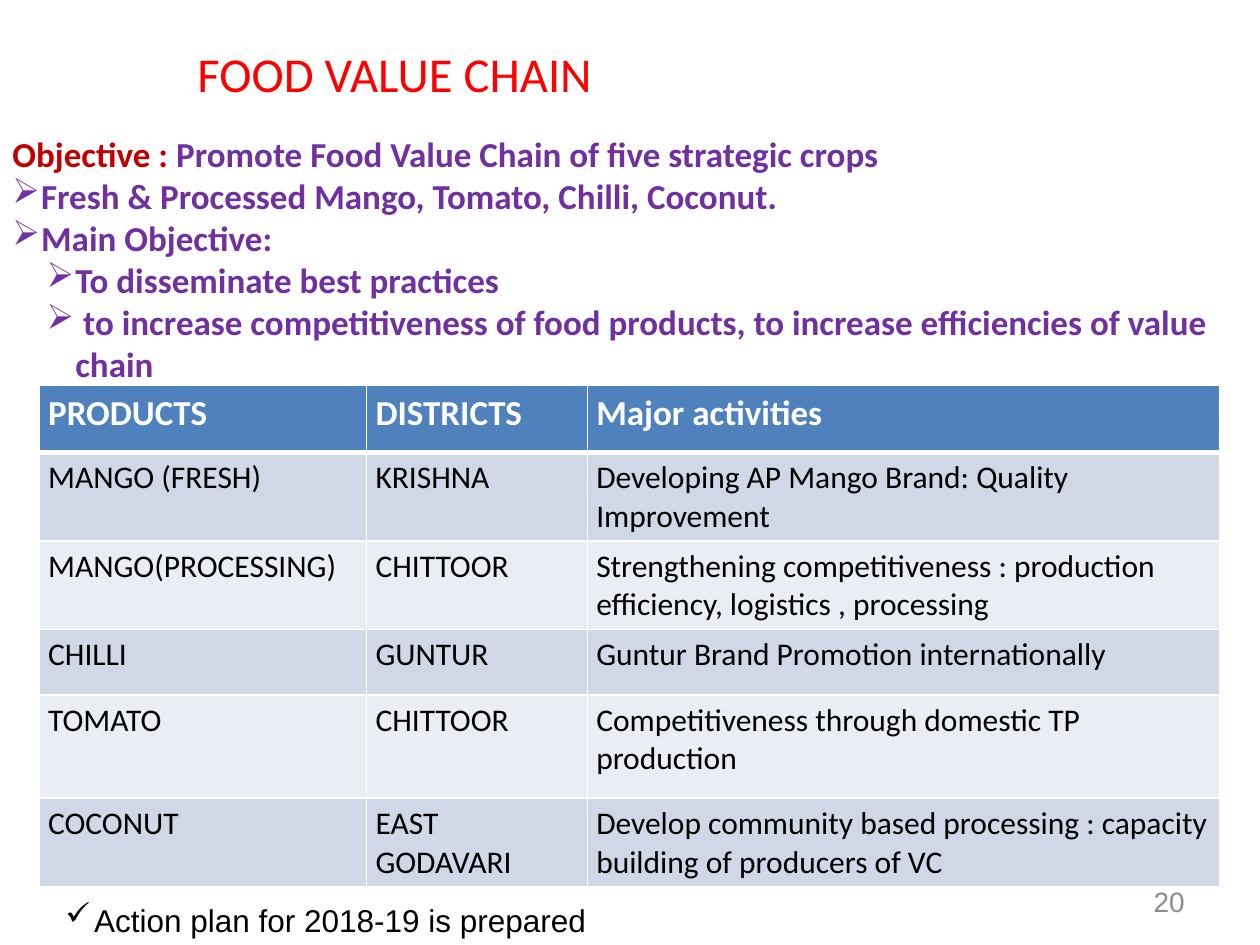
from lxml.etree import SubElement
from pptx import Presentation
from pptx.dml.color import RGBColor
from pptx.enum.text import MSO_ANCHOR as Anchor, PP_ALIGN as Align
from pptx.oxml.ns import qn
from pptx.util import Cm, Pt

COLORS = {
    "title": "FF0000", "label": "C00000", "objective": "7030A0",
    "number": "8C8C8C", "header": "4F81BD", "odd": "D0D8E8",
    "even": "E9EDF4", "white": "FFFFFF", "black": "000000",
}
HANG = 0.58
OBJECTIVES = [
    (HANG, "Fresh & Processed Mango, Tomato, Chilli, Coconut."),
    (HANG, "Main Objective:"),
    (1.27, "To disseminate best practices"),
    (1.27, " to increase competitiveness of food products, "
           "to increase efficiencies of value chain"),
]
ACTIVITIES = [
    ("PRODUCTS", "DISTRICTS", "Major activities"),
    ("MANGO (FRESH)", "KRISHNA",
     "Developing AP Mango Brand: Quality Improvement"),
    ("MANGO(PROCESSING)", "CHITTOOR",
     "Strengthening competitiveness : production efficiency, logistics , processing"),
    ("CHILLI", "GUNTUR", "Guntur Brand Promotion internationally"),
    ("TOMATO", "CHITTOOR", "Competitiveness through domestic TP production"),
    ("COCONUT", "EAST GODAVARI",
     "Develop community based processing : capacity building of producers of VC"),
]
COLUMN_WIDTHS = [6.6, 4.45, 12.75]
ROW_HEIGHTS = [1.35, 1.68, 1.7, 1.32, 2.08, 1.04]


def rgb(name):
    return RGBColor.from_string(COLORS[name])


def style(run, size, color, font="Calibri", bold=False):
    run.font.size = Pt(size)
    run.font.name = font
    run.font.bold = bold
    run.font.color.rgb = rgb(color)


def add_frame(slide, box):
    frame = slide.shapes.add_textbox(*map(Cm, box)).text_frame
    frame.word_wrap = True
    return frame


def add_bullet(paragraph, mark, margin):
    properties = paragraph._p.get_or_add_pPr()
    properties.set("marL", str(Cm(margin)))
    properties.set("indent", str(-Cm(HANG)))
    SubElement(properties, qn("a:buChar"), char=mark)


def add_title(slide, box):
    frame = add_frame(slide, box)
    frame.margin_left = Cm(0.8)
    frame.margin_top = Cm(0.48)
    heading = frame.paragraphs[0]
    heading.text = "FOOD VALUE CHAIN"
    style(heading.runs[0], 48, "title")
    heading.runs[0].font._element.set("baseline", "30000")


def add_objectives(slide, box):
    frame = add_frame(slide, box)
    lead = frame.paragraphs[0]
    for text, color in [("Objective : ", "label"),
                        ("Promote Food Value Chain of five strategic crops", "objective")]:
        run = lead.add_run()
        run.text = text
        style(run, 20, color, bold=True)
    for margin, text in OBJECTIVES:
        objective = frame.add_paragraph()
        objective.text = text
        style(objective.runs[0], 20, "objective", bold=True)
        add_bullet(objective, "➢", margin)


def add_borders(cell, bottom):
    properties = cell._tc.get_or_add_tcPr()
    widths = {"lnL": 1, "lnR": 1, "lnT": 1, "lnB": bottom}
    for position, (side, width) in enumerate(widths.items()):
        line = SubElement(properties, qn(f"a:{side}"), w=str(Pt(width)))
        fill = SubElement(line, qn("a:solidFill"))
        SubElement(fill, qn("a:srgbClr"), val=COLORS["white"])
        properties.insert(position, line)


def fill_cell(cell, text, row):
    header = row == 0
    cell.text = text
    cell.margin_left = cell.margin_right = Cm(0.18)
    cell.margin_top = cell.margin_bottom = Cm(0.13)
    cell.fill.solid()
    cell.fill.fore_color.rgb = rgb("header" if header else "odd" if row % 2 else "even")
    style(cell.text_frame.paragraphs[0].runs[0], 20 if header else 18,
          "white" if header else "black", bold=header)
    add_borders(cell, 3 if header else 1)


def add_activities(slide, box):
    table = slide.shapes.add_table(
        len(ACTIVITIES), len(COLUMN_WIDTHS), *map(Cm, box)).table
    for column, width in zip(table.columns, COLUMN_WIDTHS):
        column.width = Cm(width)
    for row, height in zip(table.rows, ROW_HEIGHTS):
        row.height = Cm(height)
    for row, texts in enumerate(ACTIVITIES):
        for column, text in enumerate(texts):
            fill_cell(table.cell(row, column), text, row)


def add_action_plan(slide, box):
    plan = add_frame(slide, box).paragraphs[0]
    plan.text = "Action plan for 2018-19 is prepared"
    style(plan.runs[0], 18, "black", "Arial")
    add_bullet(plan, "✓", HANG)


def add_page_number(slide, box):
    frame = add_frame(slide, box)
    frame.vertical_anchor = Anchor.MIDDLE
    number = frame.paragraphs[0]
    number.text = "20"
    number.alignment = Align.RIGHT
    style(number.runs[0], 16, "number", "Arial")


def main():
    deck = Presentation()
    deck.slide_width, deck.slide_height = Cm(25.4), Cm(19.05)
    slide = deck.slides.add_slide(deck.slide_layouts[6])
    add_title(slide, (3.18, 0.2, 21.59, 2.57))
    add_page_number(slide, (18.2, 17.65, 5.93, 1.02))
    add_objectives(slide, (0, 2.54, 25.4, 5.38))
    add_activities(slide, (0.79, 7.77, sum(COLUMN_WIDTHS), sum(ROW_HEIGHTS)))
    add_action_plan(slide, (1.07, 18.03, 12.07, 1.02))
    deck.save("out.pptx")


if __name__ == "__main__":
    main()
